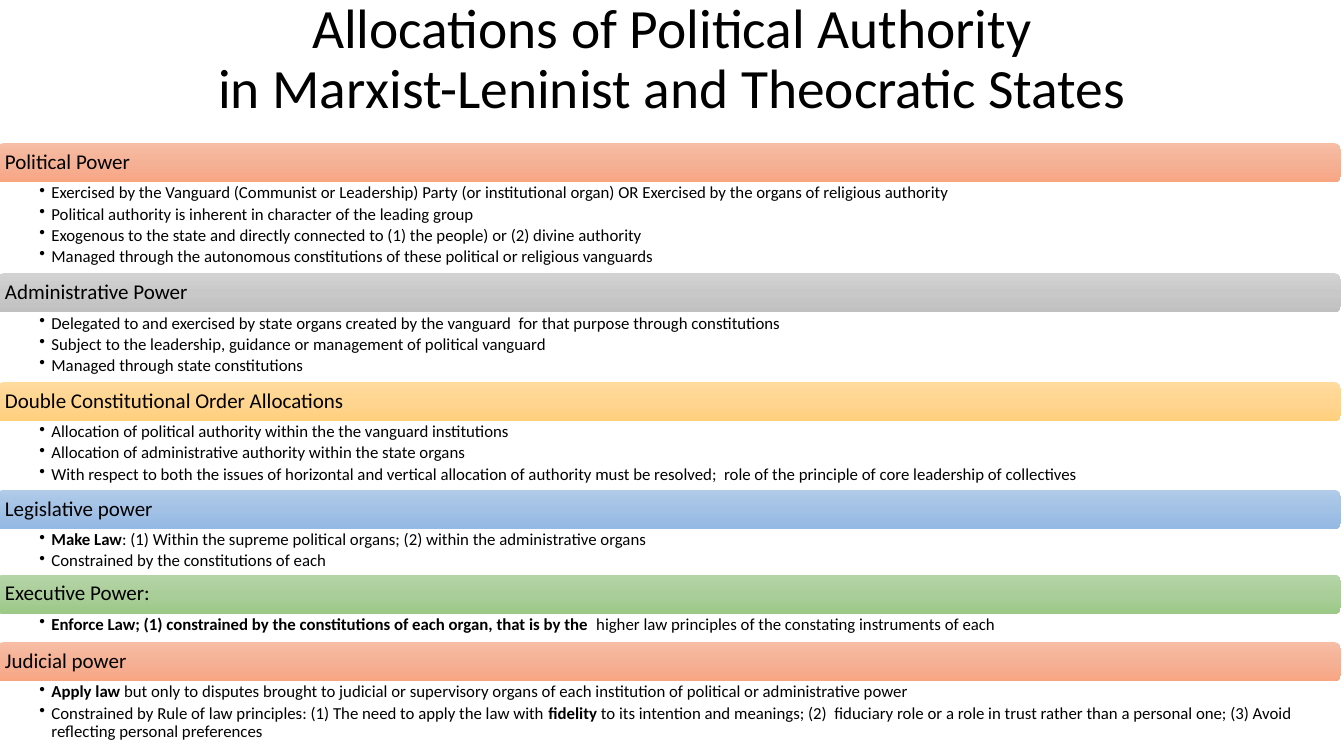
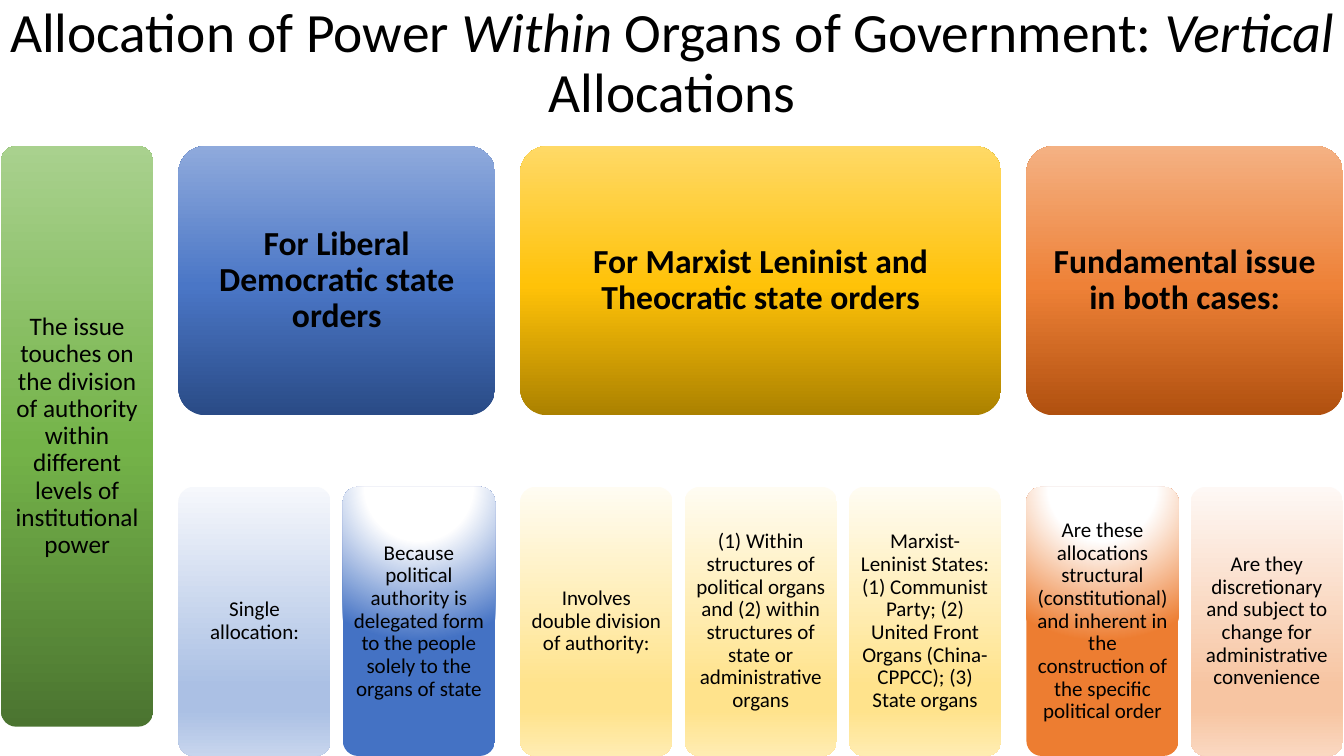
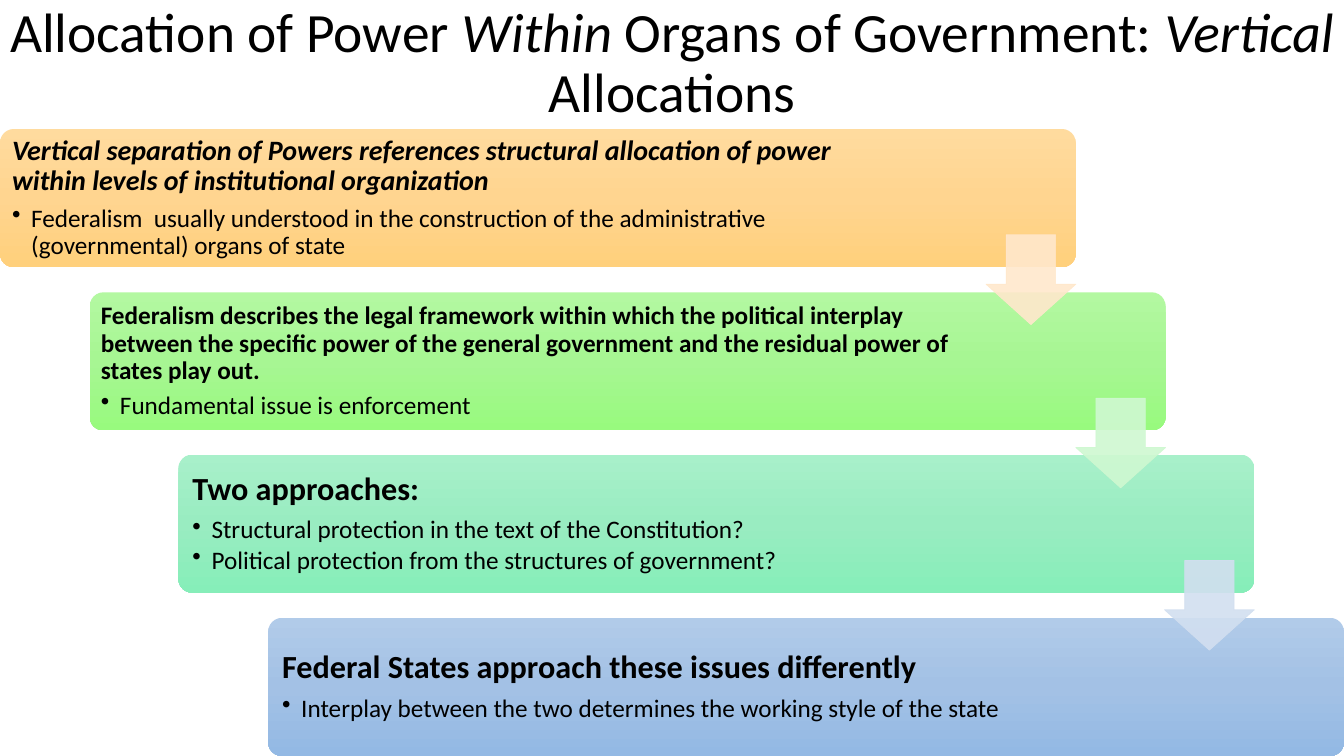
"""Build three slides on how political authority is allocated."""
from dataclasses import dataclass

from lxml import etree
from pptx import Presentation
from pptx.dml.color import RGBColor
from pptx.enum.shapes import MSO_SHAPE
from pptx.enum.text import MSO_ANCHOR, MSO_AUTO_SIZE, PP_ALIGN
from pptx.oxml import parse_xml
from pptx.oxml.ns import nsdecls, qn
from pptx.presentation import Presentation as Deck
from pptx.shapes.autoshape import Shape
from pptx.slide import Slide
from pptx.text.text import TextFrame
from pptx.util import Pt

ROUND = MSO_SHAPE.ROUNDED_RECTANGLE
ARROW = MSO_SHAPE.DOWN_ARROW
LEFT, CENTER = PP_ALIGN.LEFT, PP_ALIGN.CENTER
TOP, MIDDLE = MSO_ANCHOR.TOP, MSO_ANCHOR.MIDDLE
FIXED = MSO_AUTO_SIZE.NONE

PX = 9144
WIDE, HIGH = 1333, 750
FONT, INK = "Calibri", "000000"
TITLE = 39.6


@dataclass(frozen=True)
class Fade:
    """A gradient: percent stops, with an angle or a round glow."""
    stops: tuple[tuple[int, str], ...]
    angle: int = 90
    glow: bool = False


def soft(top: str, mid: str, end: str) -> Fade:
    """Return a gentle fade from top to bottom."""
    return Fade(((0, top), (50, mid), (100, end)))


def deep(end: str, mid: str, top: str) -> Fade:
    """Return a strong fade that is dark at the bottom."""
    return Fade(((0, end), (48, mid), (100, top)), 270)


def pale(top: str, mid: str, end: str) -> Fade:
    """Return a light fade for a lower card."""
    return Fade(((0, top), (74, mid), (83, mid), (100, end)))


def shine(tint: str) -> Fade:
    """Return a white glow over a full tint."""
    return Fade(((0, "FFFFFF"), (35, "FFFFFF"), (100, tint)), glow=True)


@dataclass(frozen=True)
class Band:
    """A headed band with the list below it."""
    head: str
    fade: Fade
    high: int
    points: tuple[str, ...]


@dataclass(frozen=True)
class Group:
    """A wide card with its row of lower cards."""
    head: str
    fade: Fade
    cards: tuple[tuple[str, Fade], ...]


@dataclass(frozen=True)
class Step:
    """A stair card, and the tint of the arrow leaving it."""
    head: str
    size: int
    inset: int
    fade: Fade
    points: tuple[str, ...]
    slant: bool = False
    arrow: str = ""


CORAL = soft("F7BDA5", "F5B196", "F8A582")
GOLD = soft("FFDB9E", "FFD590", "FFD07C")
BLUE = soft("B1CBE9", "A3C1E5", "93B9E4")
CREAM = pale("FFFCF2", "FFE38C", "FFECB2")

BANDS = (
    Band("Political Power", CORAL, 90, (
        "Exercised by the Vanguard (Communist or Leadership) Party (or institutional organ) "
        "OR Exercised by the organs of religious authority",
        "Political authority is inherent in character of the leading group",
        "Exogenous to the state and directly connected to (1) the people) or (2) divine authority",
        "Managed through the autonomous constitutions of these political or religious vanguards")),
    Band("Administrative Power", soft("D2D2D2", "C8C8C8", "C0C0C0"), 69, (
        "Delegated to and exercised by state organs created by the vanguard  for that purpose "
        "through constitutions",
        "Subject to the leadership, guidance or management of political vanguard",
        "Managed through state constitutions")),
    Band("Double Constitutional Order Allocations", GOLD, 68, (
        "Allocation of political authority within the the vanguard institutions",
        "Allocation of administrative authority within the state organs",
        "With respect to both the issues of horizontal and vertical allocation of authority must "
        "be resolved;  role of the principle of core leadership of collectives")),
    Band("Legislative power", BLUE, 45, (
        "*Make Law*: (1) Within the supreme political organs; (2) within the administrative organs",
        "Constrained by the constitutions of each")),
    Band("Executive Power:", soft("B5D5A7", "AACE9A", "9CC987"), 28, (
        "*Enforce Law; (1) constrained by the constitutions of each organ, that is by the * "
        "higher law principles of the constating instruments of each",)),
    Band("Judicial power", CORAL, 65, (
        "*Apply law *but only to disputes brought to judicial or supervisory organs of each "
        "institution of political or administrative power",
        "Constrained by Rule of law principles: (1) The need to apply the law with *fidelity* to "
        "its intention and meanings; (2)  fiduciary role or a role in trust rather than a "
        "personal one; (3) Avoid reflecting personal preferences")),
)

ISSUE = ("The issue touches on the division of authority within different levels of "
         "institutional power")
GROUPS = (
    Group("For Liberal Democratic state orders", deep("2A4B86", "4A76C6", "8FAADC"), (
        ("Single allocation:", pale("F6F8FC", "ABC0E4", "C7D5ED")),
        ("Because political authority is delegated form to the people solely to the organs "
         "of state", shine("4472C4")))),
    Group("For Marxist Leninist and Theocratic state orders",
          deep("AB8100", "FFC208", "FFD966"), (
        ("Involves double division of authority:", CREAM),
        ("(1) Within structures of political organs and (2) within structures of state or "
         "administrative organs", CREAM),
        ("Marxist-Leninist States: (1) Communist Party; (2) United Front Organs "
         "(China-CPPCC); (3) State organs", CREAM))),
    Group("Fundamental issue in both cases:", deep("B0500F", "EE8137", "F4B183"), (
        ("Are these allocations structural (constitutional) and inherent in the construction "
         "of the specific political order", shine("ED7D31")),
        ("Are they discretionary and subject to change for administrative convenience",
         pale("FEF8F5", "F7C5A2", "FAD8C1")))),
)

STEPS = (
    Step("Vertical separation of Powers references structural allocation of power within "
         "levels of institutional organization", 20, 8, GOLD,
         ("Federalism  usually understood in the construction of the administrative "
          "(governmental) organs of state",), slant=True, arrow="FFE8CC"),
    Step("Federalism describes the legal framework within which the political interplay between "
         "the specific power of the general government and the residual power of states play out.",
         18, 7, soft("B3F8A1", "A7F693", "98FA7E"),
         ("Fundamental issue is enforcement",), arrow="CFF8D1"),
    Step("Two approaches:", 23, 10, soft("A8F0CA", "99ECC1", "86EEB9"),
         ("Structural protection in the text of the Constitution?",
          "Political protection from the structures of government?"), arrow="D2DFF0"),
    Step("Federal States approach these issues differently", 23, 10, BLUE,
         ("Interplay between the two determines the working style of the state",)),
)

SPLIT = "Allocation of Power *Within* Organs of Government: *Vertical* Allocations"


def rgb(code: str) -> RGBColor:
    """Turn a hex string into a colour."""
    return RGBColor.from_string(code)


def box(*sides: int) -> tuple[int, ...]:
    """Turn px lengths into EMU."""
    return tuple(side * PX for side in sides)


def pad(frame: TextFrame, *sides: int, anchor: MSO_ANCHOR = MIDDLE) -> TextFrame:
    """Set wrapping, anchor and the left, top, right and bottom insets."""
    frame.word_wrap, frame.auto_size = True, FIXED
    frame.vertical_anchor = anchor
    (frame.margin_left, frame.margin_top,
     frame.margin_right, frame.margin_bottom) = box(*sides)
    return frame


def write(frame: TextFrame, text: str, *, size: float, bold: bool = False,
          slant: bool = False, mark: str = "bold", align: PP_ALIGN = LEFT,
          after: float = 0, hang: int = 0) -> None:
    """Add a paragraph; starred parts take the mark, and hang gives a bullet."""
    para = frame.paragraphs[0]
    if para.runs:
        para = frame.add_paragraph()
    if hang:
        props = para._p.get_or_add_pPr()
        props.set("marL", str(hang * PX))
        props.set("indent", str(-hang * PX))
        etree.SubElement(props, qn("a:buChar")).set("char", "•")
    para.alignment, para.line_spacing = align, 0.9
    para.space_after = Pt(after)
    for count, part in enumerate(text.split("*")):
        for row, line in enumerate(part.split("\n")):
            if row:
                para.add_line_break()
            if not line:
                continue
            run = para.add_run()
            run.text = line
            font = run.font
            font.name, font.size = FONT, Pt(size)
            font.color.rgb = rgb(INK)
            font.bold, font.italic = bold, slant
            if count % 2:
                setattr(font, mark, True)


def paint(shape: Shape, fade: Fade) -> None:
    """Fill a shape with a gradient."""
    stops = "".join(f'<a:gs pos="{pos * 1000}"><a:srgbClr val="{code}"/></a:gs>'
                    for pos, code in fade.stops)
    way = f'<a:lin ang="{fade.angle * 60000}" scaled="0"/>'
    if fade.glow:
        way = ('<a:path path="circle"><a:fillToRect l="50000" t="-80000" '
               'r="50000" b="180000"/></a:path>')
    shape._element.spPr.insert(2, parse_xml(
        f'<a:gradFill {nsdecls("a")} rotWithShape="1"><a:gsLst>{stops}</a:gsLst>{way}</a:gradFill>'))


def card(slide: Slide, place: tuple[int, ...], fade: Fade, curve: float = 0.1) -> TextFrame:
    """Draw a rounded card and return its text frame."""
    shape = slide.shapes.add_shape(ROUND, *box(*place))
    shape.adjustments[0] = curve
    shape.shadow.inherit = False
    shape.line.fill.background()
    paint(shape, fade)
    return shape.text_frame


def label(slide: Slide, place: tuple[int, ...], fade: Fade, text: str,
          size: int, inset: int, bold: bool = False) -> None:
    """Draw a card with centred text."""
    frame = pad(card(slide, place, fade), *[inset] * 4)
    write(frame, text, size=size, bold=bold, align=CENTER, after=round(size * 0.3, 1))


def arrow(slide: Slide, left: int, top: int, tint: str) -> None:
    """Draw a slightly clear down arrow."""
    shape = slide.shapes.add_shape(ARROW, *box(left, top, 89, 89))
    shape.adjustments[0], shape.adjustments[1] = 0.55, 0.45
    shape.shadow.inherit = False
    shape.fill.solid()
    shape.fill.fore_color.rgb = rgb(tint)
    shape.line.color.rgb = rgb(tint)
    shape.line.width = Pt(0.5)
    for node in shape._element.spPr.iter(qn("a:srgbClr")):
        etree.SubElement(node, qn("a:alpha")).set("val", "90000")


def start(deck: Deck, text: str, high: int) -> Slide:
    """Add a slide with its title."""
    slide = deck.slides.add_slide(deck.slide_layouts[5])
    title = slide.shapes.title
    title.left, title.top, title.width, title.height = box(0, 0, WIDE, high)
    frame = pad(title.text_frame, 10, 5, 10, 5)
    write(frame, text, size=TITLE, mark="italic", align=CENTER)
    return slide


def bands(deck: Deck) -> None:
    """Build the slide of stacked bands and lists."""
    slide = start(deck, "Allocations of Political Authority\n"
                        "in Marxist-Leninist and Theocratic States", 120)
    left, top, thick = -3, 142, 39
    for band in BANDS:
        frame = card(slide, (left, top, WIDE, thick), band.fade, 0.17)
        write(pad(frame, 6, 6, 6, 6), band.head, size=15, after=4.5)
        top += thick
        area = slide.shapes.add_textbox(*box(left, top, WIDE, band.high))
        frame = pad(area.text_frame, 42, 2, 12, 2, anchor=TOP)
        for point in band.points:
            write(frame, point, size=12, after=2.1, hang=12)
        top += band.high


def columns(deck: Deck) -> None:
    """Build the slide of grouped cards."""
    slide = start(deck, SPLIT, 128)
    wide, gap, space, tall = 151, 12, 25, 267
    top, low = 145, HIGH - tall
    label(slide, (1, top, wide, 576), deep("4B7430", "74B349", "A9D18E"), ISSUE, 18, 7)
    left = 1 + wide + space
    for group in GROUPS:
        span = len(group.cards) * (wide + gap) - gap
        label(slide, (left, top, span, tall), group.fade, group.head, 24, 10, bold=True)
        for count, (text, fade) in enumerate(group.cards):
            label(slide, (left + count * (wide + gap), low, wide, tall), fade, text, 15, 6)
        left += span + space


def stairs(deck: Deck) -> None:
    """Build the slide of stepped cards and arrows."""
    slide = start(deck, SPLIT, 128)
    wide, tall, first = 1067, 137, 128
    last = len(STEPS) - 1
    spots = [(round((WIDE - wide) * n / last),
              first + round((HIGH - tall - first) * n / last)) for n in range(last + 1)]
    for step, (left, top) in zip(STEPS, spots):
        inset = step.inset
        frame = pad(card(slide, (left, top, wide, tall), step.fade), inset, inset, 180, inset)
        write(frame, step.head, size=step.size, bold=True, slant=step.slant,
              after=round(step.size * 0.3, 1))
        for point in step.points:
            write(frame, point, size=18, after=2.3, hang=19)
    for step, (left, top) in zip(STEPS, spots):
        if step.arrow:
            arrow(slide, left + 978, top + 105, step.arrow)


def main() -> None:
    """Build and save the deck."""
    deck = Presentation()
    deck.slide_width, deck.slide_height = box(WIDE, HIGH)
    style = next(deck.slide_master.element.iter(qn("p:titleStyle")))
    next(style.iter(qn("a:defRPr"))).set("sz", str(round(TITLE * 100)))
    bands(deck)
    columns(deck)
    stairs(deck)
    deck.save("out.pptx")


if __name__ == "__main__":
    main()
